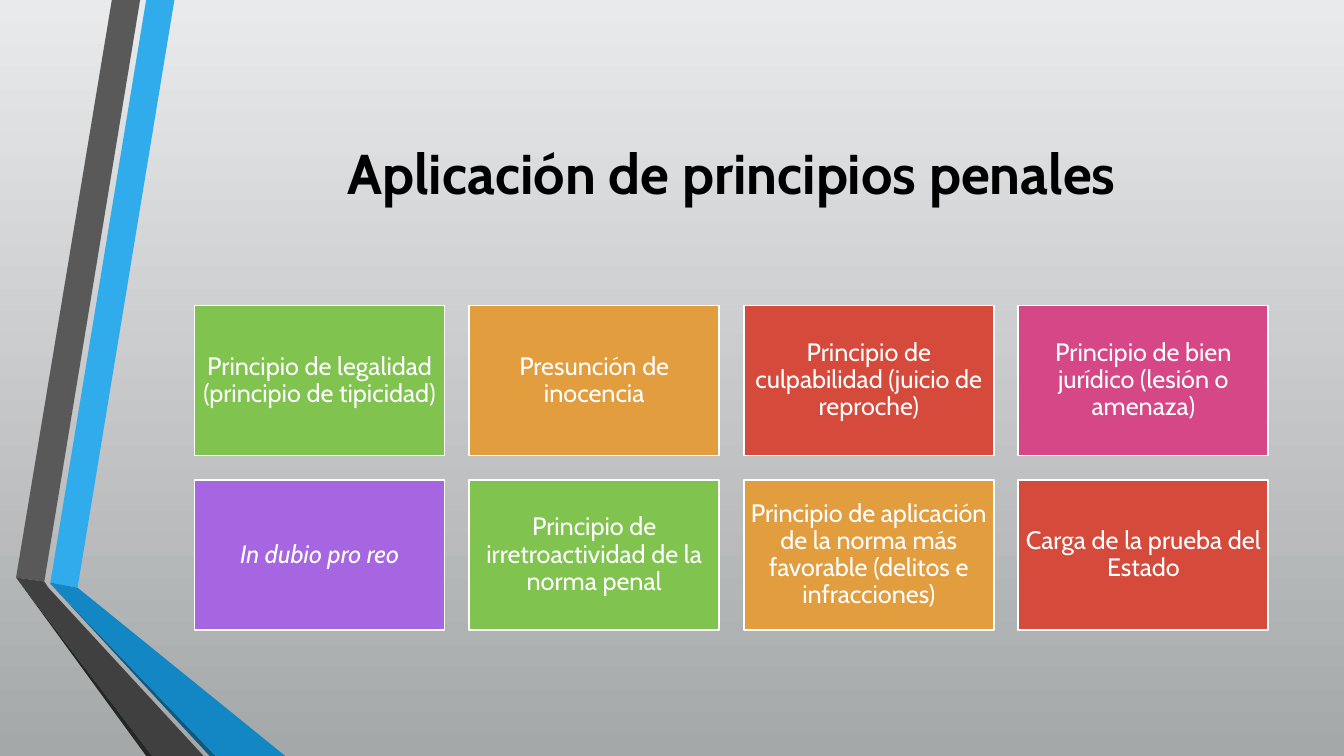
from pptx import Presentation
from pptx import util as u
from pptx.dml.color import RGBColor
from pptx.enum import shapes, text

WIDTH, HEIGHT = 13.33, 7.5
GREEN, ORANGE, RED, PINK, PURPLE = "80C34F", "E29D3E", "D64A3B", "D64787", "A666E1"

RIBBONS = [
    ("30ACEC", [(0.5, 5.78), (0.77, 5.83), (1.73, 0), (1.45, 0)]),
    ("595959", [(1.39, 0), (1.11, 0), (0.16, 5.73), (0.44, 5.77)]),
    ("262626", [(0.16, 5.73), (1.45, HEIGHT), (1.51, HEIGHT)]),
    ("0C5A82", [(0.5, 5.79), (2.08, HEIGHT), (2.14, HEIGHT)]),
    ("1287C3", [(0.5, 5.78), (0.5, 5.79), (2.14, HEIGHT), (2.83, HEIGHT), (0.77, 5.83)]),
    ("404040", [(0.16, 5.73), (1.51, HEIGHT), (2.02, HEIGHT), (0.48, 5.83), (0.44, 5.77)]),
]

LATIN = "In dubio pro reo"
CARDS = [
    ("Principio de legalidad (principio de tipicidad)", GREEN),
    ("Presunción de inocencia", ORANGE),
    ("Principio de culpabilidad (juicio de reproche)", RED),
    ("Principio de bien jurídico (lesión o amenaza)", PINK),
    (LATIN, PURPLE),
    ("Principio de irretroactividad de la norma penal", GREEN),
    ("Principio de aplicación de la norma más favorable (delitos e infracciones)", ORANGE),
    ("Carga de la prueba del Estado", RED),
]
COLS = 4
LEFT, TOP = 1.93, 3.03
GRID_W = 10.65
CARD_W, CARD_H = 2.48, 1.49
STEP_X, STEP_Y = (GRID_W - CARD_W) / (COLS - 1), 1.73


def color(code):
    return RGBColor.from_string(code)


class Deck:
    font = "Cabin"

    def __init__(self):
        self.prs = Presentation()
        self.prs.slide_width = u.Inches(WIDTH)
        self.prs.slide_height = u.Inches(HEIGHT)
        self.slide = self.prs.slides.add_slide(self.prs.slide_layouts[6])

    def backdrop(self, top, bottom):
        fill = self.slide.background.fill
        fill.gradient()
        fill.gradient_angle = 270
        for stop, code in zip(fill.gradient_stops, (top, bottom)):
            stop.color.rgb = color(code)

    def paint(self, shape, code):
        shape.shadow.inherit = False
        shape.fill.solid()
        shape.fill.fore_color.rgb = color(code)

    def ribbon(self, code, points):
        first, *rest = [(u.Inches(x), u.Inches(y)) for x, y in points]
        builder = self.slide.shapes.build_freeform(*first)
        builder.add_line_segments(rest)
        shape = builder.convert_to_shape()
        self.paint(shape, code)
        shape.line.fill.background()

    def label(self, shape, words, size, code):
        """Put one centred paragraph in the shape and return it."""
        frame = shape.text_frame
        frame.word_wrap = True
        frame.vertical_anchor = text.MSO_ANCHOR.MIDDLE
        frame.margin_left = frame.margin_right = u.Inches(0.07)
        frame.margin_top = frame.margin_bottom = u.Inches(0.07)
        para = frame.paragraphs[0]
        para.text = words
        para.alignment = text.PP_ALIGN.CENTER
        para.font.name = self.font
        para.font.size = u.Pt(size)
        para.font.color.rgb = color(code)
        return para

    def title(self, words, *box):
        shape = self.slide.shapes.add_textbox(*map(u.Inches, box))
        self.label(shape, words, 40, "000000").font.bold = True

    def card(self, words, code, *box):
        shape = self.slide.shapes.add_shape(
            shapes.MSO_SHAPE.RECTANGLE, *map(u.Inches, box))
        self.paint(shape, code)
        shape.line.color.rgb = color("FFFFFF")
        shape.line.width = u.Pt(1.25)
        para = self.label(shape, words, 18, "FFFFFF")
        para.line_spacing = 0.9
        para.font.italic = words == LATIN


def main():
    deck = Deck()
    deck.backdrop("E9EAEB", "A5A8A9")
    for code, points in RIBBONS:
        deck.ribbon(code, points)
    deck.title("Aplicación de principios penales", LEFT, 0.75, GRID_W, 1.92)
    for i, (words, code) in enumerate(CARDS):
        row, col = divmod(i, COLS)
        deck.card(words, code, LEFT + col * STEP_X, TOP + row * STEP_Y, CARD_W, CARD_H)
    deck.prs.save("out.pptx")


if __name__ == "__main__":
    main()
